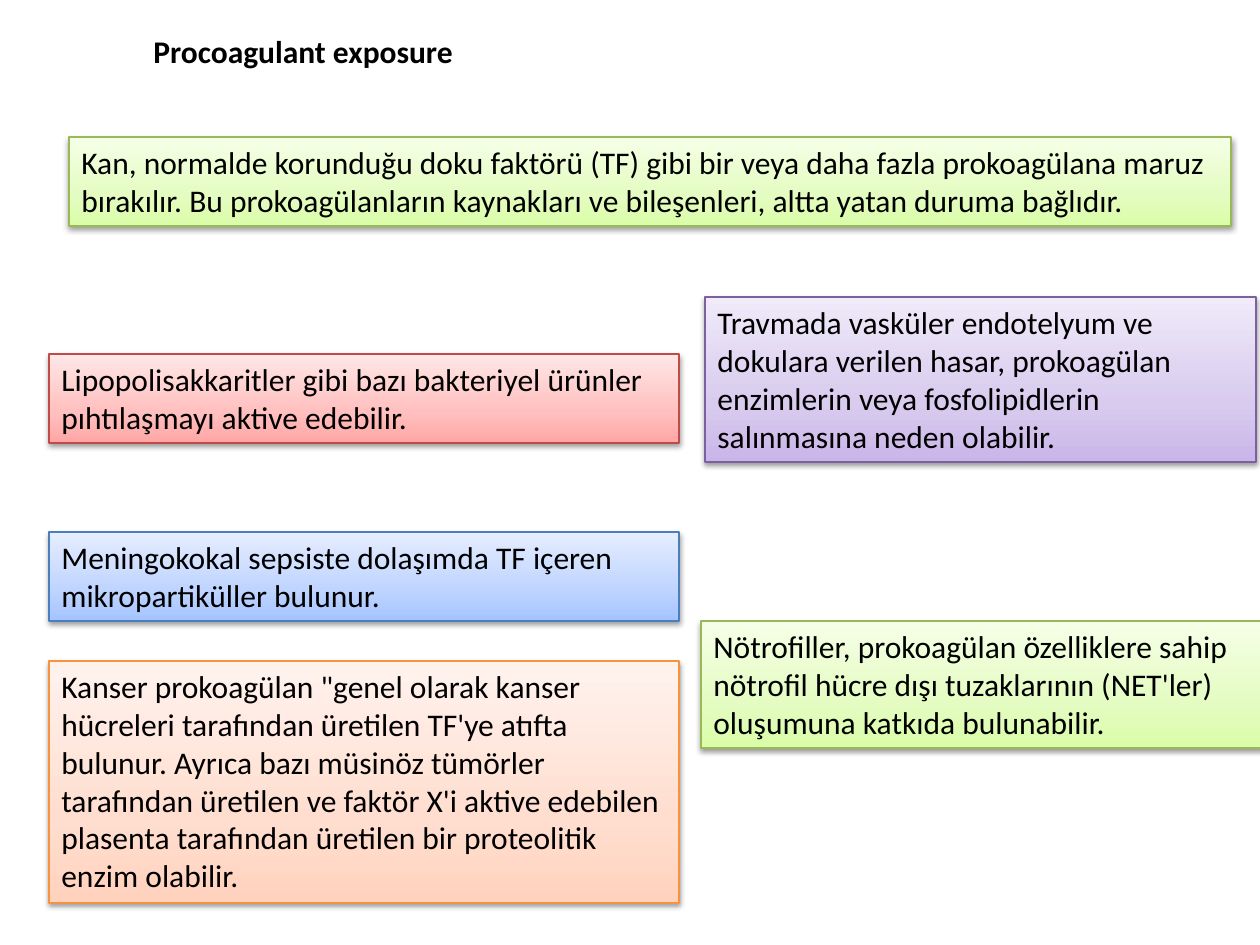
import copy

import lxml.etree
import pptx
import pptx.dml.color
import pptx.enum.shapes
import pptx.enum.text
import pptx.oxml.ns
import pptx.util

PX = 914400 / 126
W, H = 1260, 945

TITLE = ("Procoagulant exposure", (141, 26, 350, 50))

# name: (line, gradient from bottom to top)
STYLES = {
    "green": ("98B955", ("DAFDA7", "E4FCC2", "F5FFE7")),
    "red": ("BF4C48", ("FFA6A5", "FFC0BF", "FFE7E7")),
    "blue": ("4B7EBC", ("A4C4FF", "BFD4FF", "E6EEFF")),
    "orange": ("F69240", ("FFD2BD", "FFDED0", "FFF2ED")),
    "purple": ("7D60A0", ("C9B5E8", "D8CBEE", "F0EAF9")),
}
STOPS = (0, 0.35, 1)

LEFT, LEFT_W = 49, 630
CARDS = [
    ("green", (69, 137, 1162, 89),
     "Kan, normalde korunduğu doku faktörü (TF) gibi bir veya daha fazla prokoagülana "
     "maruz bırakılır. Bu prokoagülanların kaynakları ve bileşenleri, altta yatan "
     "duruma bağlıdır."),
    ("red", (LEFT, 354, LEFT_W, 89),
     "Lipopolisakkaritler gibi bazı bakteriyel ürünler pıhtılaşmayı aktive edebilir."),
    ("blue", (LEFT, 532, LEFT_W, 89),
     "Meningokokal sepsiste dolaşımda TF içeren mikropartiküller bulunur."),
    ("orange", (LEFT, 661, LEFT_W, 242),
     "Kanser prokoagülan \"genel olarak kanser hücreleri tarafından üretilen TF'ye "
     "atıfta bulunur. Ayrıca bazı müsinöz tümörler tarafından üretilen ve faktör X'i "
     "aktive edebilen plasenta tarafından üretilen bir proteolitik enzim olabilir."),
    ("purple", (705, 297, 551, 165),
     "Travmada vasküler endotelyum ve dokulara verilen hasar, prokoagülan enzimlerin "
     "veya fosfolipidlerin salınmasına neden olabilir."),
    ("green", (701, 621, 561, 127),
     "Nötrofiller, prokoagülan özelliklere sahip nötrofil hücre dışı tuzaklarının "
     "(NET'ler) oluşumuna katkıda bulunabilir."),
]

qn = pptx.oxml.ns.qn


def px(n):
    return round(n * PX)


def rgb(color):
    return pptx.dml.color.RGBColor.from_string(color)


def set_text(sp, text, bold=False):
    tf = sp.text_frame
    tf.word_wrap = True
    tf.auto_size = pptx.enum.text.MSO_AUTO_SIZE.SHAPE_TO_FIT_TEXT
    tf.vertical_anchor = pptx.enum.text.MSO_ANCHOR.TOP
    p = tf.paragraphs[0]
    p.text = text
    p.alignment = pptx.enum.text.PP_ALIGN.LEFT
    p.font.name = "Calibri"
    p.font.size = pptx.util.Pt(18)
    p.font.bold = bold
    p.font.color.rgb = rgb("000000")


def set_gradient(sp, colors):
    sp.fill.gradient()
    sp.fill.gradient_angle = 90
    stops = sp._element.spPr.find(qn("a:gradFill")).find(qn("a:gsLst"))
    stops.insert(1, copy.deepcopy(stops[0]))
    for stop, position, color in zip(sp.fill.gradient_stops, STOPS, colors):
        stop.position = position
        stop.color.rgb = rgb(color)


def set_shadow(sp):
    sp.shadow.inherit = False
    effects = sp._element.spPr.find(qn("a:effectLst"))
    shadow = lxml.etree.SubElement(
        effects, qn("a:outerShdw"), blurRad="40000", dist="20000",
        dir="5400000", rotWithShape="0")
    color = lxml.etree.SubElement(shadow, qn("a:srgbClr"), val="000000")
    lxml.etree.SubElement(color, qn("a:alpha"), val="38000")


def add_card(slide, style, box, text):
    line, colors = STYLES[style]
    sp = slide.shapes.add_shape(pptx.enum.shapes.MSO_SHAPE.RECTANGLE, *map(px, box))
    set_gradient(sp, colors)
    sp.line.color.rgb = rgb(line)
    sp.line.width = pptx.util.Pt(0.75)
    set_shadow(sp)
    set_text(sp, text)


def main():
    prs = pptx.Presentation()
    prs.slide_width, prs.slide_height = px(W), px(H)
    slide = prs.slides.add_slide(prs.slide_layouts[6])
    title, box = TITLE
    set_text(slide.shapes.add_textbox(*map(px, box)), title, bold=True)
    for card in CARDS:
        add_card(slide, *card)
    prs.save("out.pptx")


if __name__ == "__main__":
    main()
